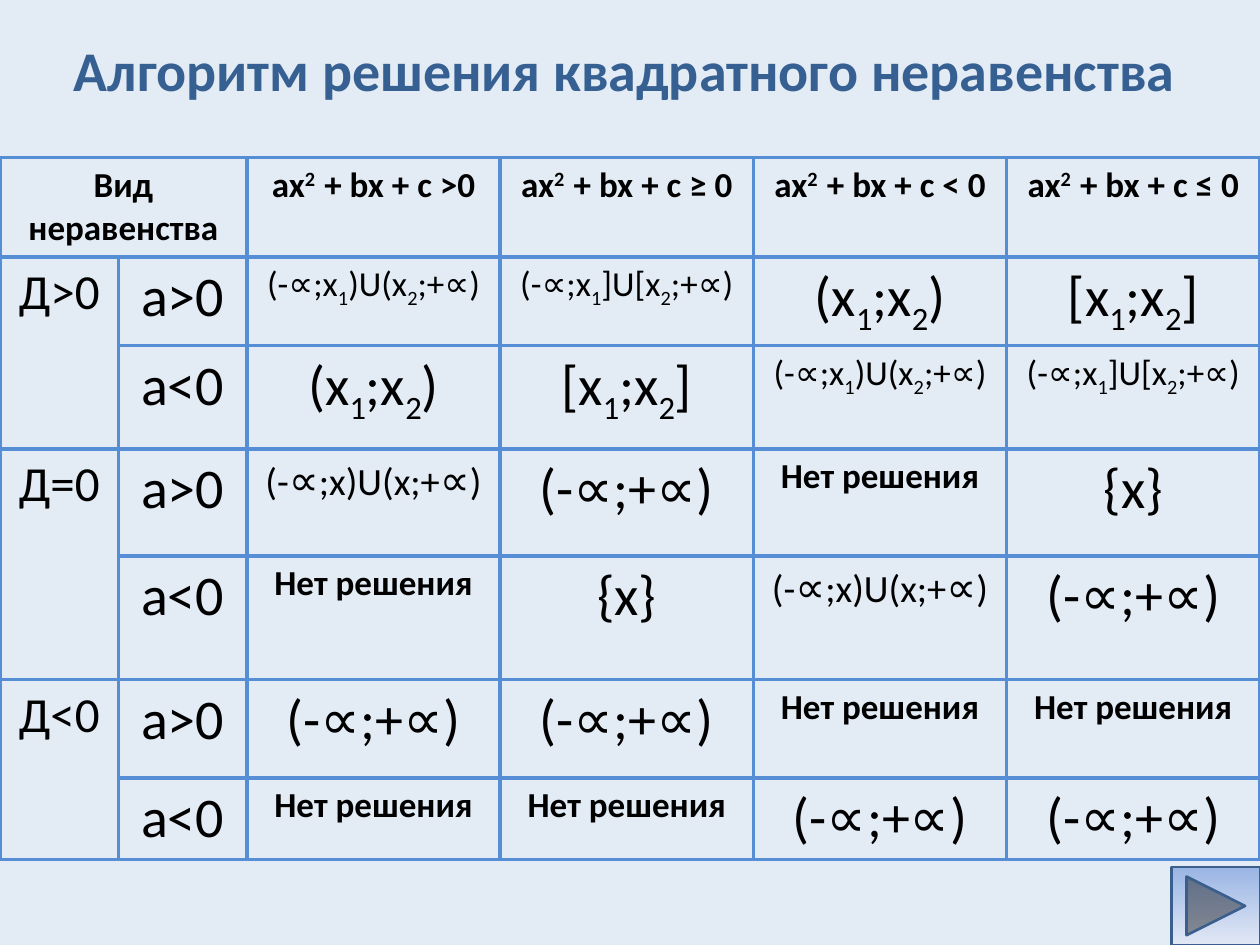
from lxml import etree
from pptx import Presentation
from pptx.dml.color import RGBColor
from pptx.enum.shapes import MSO_SHAPE
from pptx.enum.text import MSO_ANCHOR, MSO_AUTO_SIZE, PP_ALIGN
from pptx.oxml.ns import qn
from pptx.util import Inches, Pt

CENTER, TOP = PP_ALIGN.CENTER, MSO_ANCHOR.TOP
NO_AUTOFIT = MSO_AUTO_SIZE.NONE
FORWARD_BUTTON = MSO_SHAPE.ACTION_BUTTON_FORWARD_OR_NEXT

FONT = "Calibri"
COLORS = {
    "background": "E3EBF5", "title": "376092", "text": "000000", "border": "558ED5",
    "button_top": "9AB5E4", "button_bottom": "E1E8F5", "button_line": "3A5F8C",
}
TITLE = "Алгоритм решения квадратного неравенства"

STYLES = {
    "head": {"size": 20, "bold": True, "baseline": 30000},
    "discriminant": {"size": 28},
    "large": {"size": 32, "baseline": -25000},
    "union": {"size": 20, "baseline": -25000},
    "punctured": {"size": 22, "marked_size": 24},
    "none": {"size": 20, "bold": True},
}

# Every second segment between bars is raised, lowered or enlarged by its style.
HEADINGS = [("head", "Вид неравенства"), None] + [
    ("head", f"ax|2  |+ bx + c {sign}") for sign in (">0", "≥ 0", "< 0", "≤ 0")]
OPEN_OUTSIDE = ("union", "(-∝;x|1|)U(x|2|;+∝)")
CLOSED_OUTSIDE = ("union", "(-∝;x|1|]U[x|2|;+∝)")
OPEN_INSIDE = ("large", "(x|1|;x|2|)")
CLOSED_INSIDE = ("large", "[x|1|;x|2|]")
EXCEPT_ROOT = ("punctured", "(-|∝|;x)U(x;+|∝|)")
ALL_REALS = ("large", "(-∝;+∝)")
ROOT = ("large", "{x}")
NO_SOLUTION = ("none", "Нет решения")

CASES = [
    ("Д>0", [OPEN_OUTSIDE, CLOSED_OUTSIDE, OPEN_INSIDE, CLOSED_INSIDE]),
    ("Д=0", [EXCEPT_ROOT, ALL_REALS, NO_SOLUTION, ROOT]),
    ("Д<0", [ALL_REALS, ALL_REALS, NO_SOLUTION, NO_SOLUTION]),
]
COLUMN_WIDTHS = [0.94, 1.02] + [2.01] * 4
ROW_HEIGHTS = [0.79, 0.7, 0.82, 0.85, 0.98, 0.78, 0.65]


def rgb(name):
    return RGBColor.from_string(COLORS[name])


def draw_borders(cell):
    properties = cell._tc.get_or_add_tcPr()
    for side in ("lnL", "lnR", "lnT", "lnB"):
        line = etree.SubElement(properties, qn(f"a:{side}"), w=str(Pt(2.25)))
        fill = etree.SubElement(line, qn("a:solidFill"))
        etree.SubElement(fill, qn("a:srgbClr"), val=COLORS["border"])


def write_entry(cell, entry):
    style_name, text = entry
    style = STYLES[style_name]
    paragraph = cell.text_frame.paragraphs[0]
    paragraph.alignment = CENTER
    for index, segment in enumerate(text.split("|")):
        run = paragraph.add_run()
        run.text = segment
        marked = index % 2 == 1
        size = style.get("marked_size", style["size"]) if marked else style["size"]
        run.font.name, run.font.size = FONT, Pt(size)
        run.font.bold = style.get("bold", False)
        run.font.color.rgb = rgb("text")
        if marked and "baseline" in style:
            run._r.get_or_add_rPr().set("baseline", str(style["baseline"]))


def add_title(slide):
    title = slide.shapes.title
    title.left, title.top = Inches(0.47), Inches(0.23)
    title.width, title.height = Inches(8.98), Inches(0.94)
    frame = title.text_frame
    frame.text = TITLE
    frame.auto_size, frame.vertical_anchor = NO_AUTOFIT, TOP
    paragraph = frame.paragraphs[0]
    paragraph.alignment = CENTER
    font = paragraph.runs[0].font
    font.name, font.size, font.bold = FONT, Pt(32), True
    font.color.rgb = rgb("title")


def add_solutions(slide):
    rows = [HEADINGS]
    for discriminant, answers in CASES:
        rows.append([("discriminant", discriminant), ("large", "a>0")] + answers)
        rows.append([None, ("large", "a<0")] + answers[2:] + answers[:2])
    table = slide.shapes.add_table(
        len(rows), len(COLUMN_WIDTHS), 0, Inches(1.25),
        Inches(sum(COLUMN_WIDTHS)), Inches(sum(ROW_HEIGHTS))).table
    table.first_row = table.horz_banding = False
    for column, width in zip(table.columns, COLUMN_WIDTHS):
        column.width = Inches(width)
    for row, height in zip(table.rows, ROW_HEIGHTS):
        row.height = Inches(height)
    table.cell(0, 0).merge(table.cell(0, 1))
    for top in range(1, len(rows), 2):
        table.cell(top, 0).merge(table.cell(top + 1, 0))
    for r, entries in enumerate(rows):
        for c, entry in enumerate(entries):
            cell = table.cell(r, c)
            draw_borders(cell)
            cell.fill.background()
            if entry:
                write_entry(cell, entry)


def add_next_button(slide):
    button = slide.shapes.add_shape(
        FORWARD_BUTTON, Inches(9.3), Inches(6.88), Inches(0.7), Inches(0.62))
    button.shadow.inherit = False
    button.fill.gradient()
    button.fill.gradient_angle = 270
    for stop, name in zip(button.fill.gradient_stops, ("button_top", "button_bottom")):
        stop.color.rgb = rgb(name)
    button.fill.gradient_stops[0].position = 0
    button.fill.gradient_stops[1].position = 1
    button.line.color.rgb = rgb("button_line")
    button.line.width = Pt(1.5)


def main():
    deck = Presentation()
    deck.slide_width, deck.slide_height = Inches(10), Inches(7.5)
    slide = deck.slides.add_slide(deck.slide_layouts[5])
    slide.background.fill.solid()
    slide.background.fill.fore_color.rgb = rgb("background")
    add_title(slide)
    add_solutions(slide)
    add_next_button(slide)
    deck.save("out.pptx")


if __name__ == "__main__":
    main()
